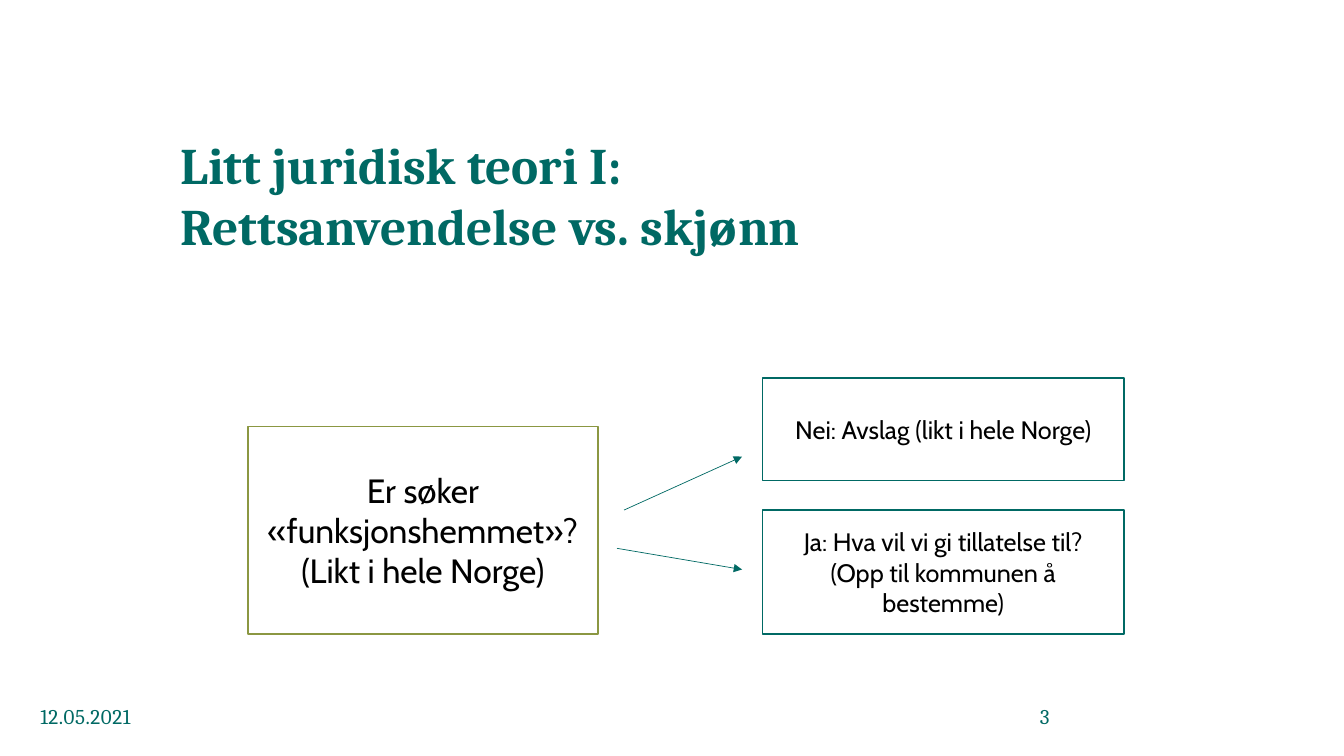
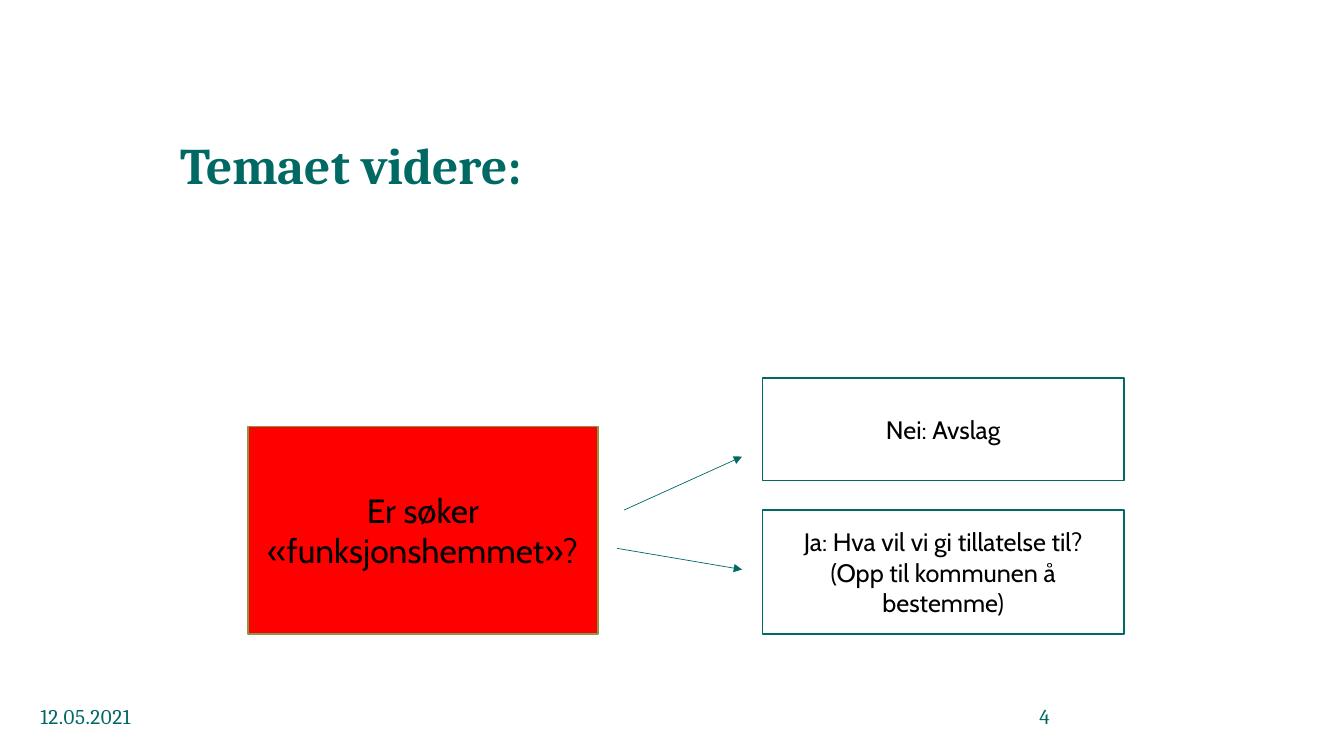
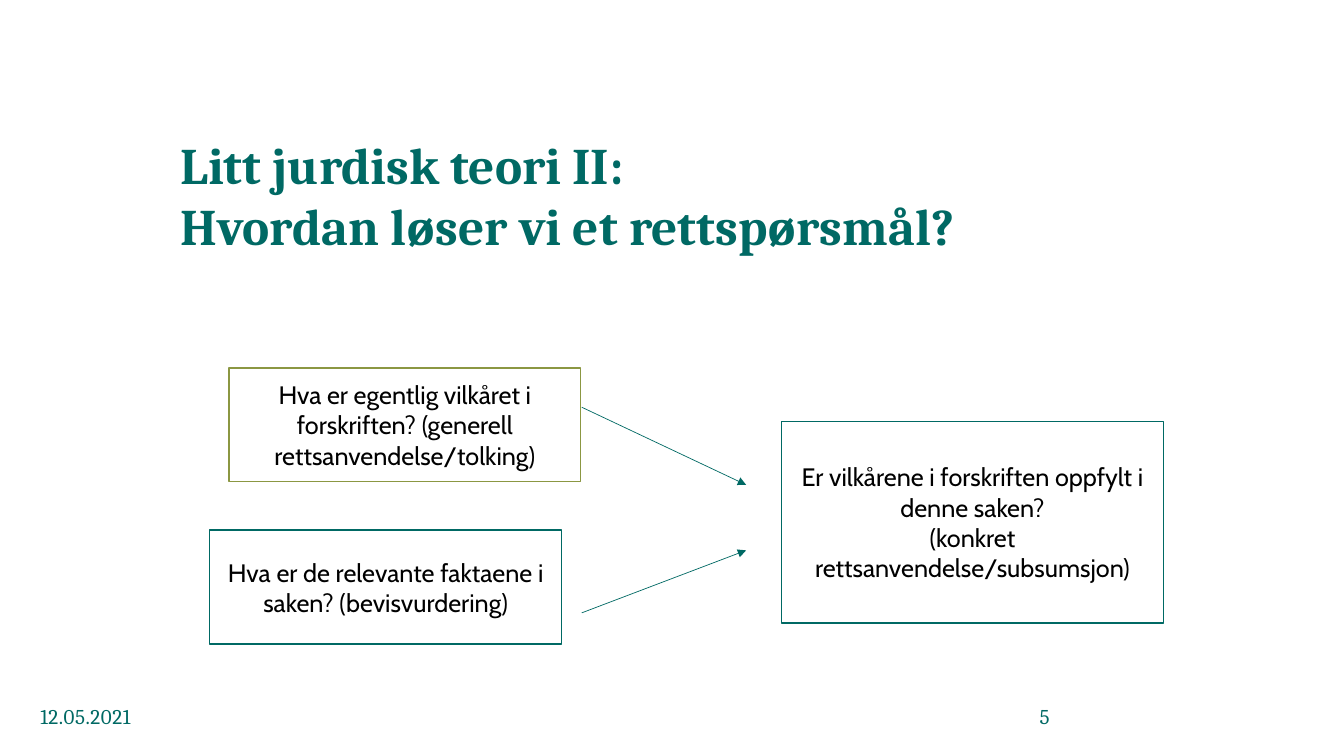
import dataclasses

import lxml.etree
import pptx
import pptx.dml.color
import pptx.enum.shapes
import pptx.enum.text
import pptx.oxml.ns
import pptx.util

Inches = pptx.util.Inches
Pt = pptx.util.Pt
ALIGN = pptx.enum.text.PP_ALIGN
ANCHOR = pptx.enum.text.MSO_ANCHOR


@dataclasses.dataclass(frozen=True)
class Theme:
    """Colours, fonts and sizes shared by the slides."""
    teal: str = "006964"
    olive: str = "8B9742"
    red: str = "FF0000"
    white: str = "FFFFFF"
    black: str = "000000"
    heading_font: str = "Cambria"
    body_font: str = "Cabin"
    title_size: float = 36.6
    title_leading: float = 44
    question_size: float = 24
    body_size: float = 18
    footer_size: float = 15
    footer_spacing: int = 40
    border: float = 1
    arrow: float = 0.5


THEME = Theme()


def rgb(code):
    """Turn a hex code into a colour."""
    return pptx.dml.color.RGBColor.from_string(code)


def add_run(paragraph, text, font, size, color, bold=False):
    """Add one styled run and return it."""
    run = paragraph.add_run()
    run.text = text
    run.font.name = font
    run.font.size = Pt(size)
    run.font.bold = bold
    run.font.color.rgb = rgb(color)
    return run


def add_text_area(slide, left, top, width, height):
    """Add a wrapping text box without insets and return its first paragraph."""
    area = slide.shapes.add_textbox(Inches(left), Inches(top), Inches(width), Inches(height))
    frame = area.text_frame
    frame.word_wrap = True
    frame.margin_left = frame.margin_top = frame.margin_right = frame.margin_bottom = 0
    return frame.paragraphs[0]


def add_title(slide, lines):
    """Place the slide title, one line of text under another."""
    heading = add_text_area(slide, 1.79, 1.32, 10.16, 1.23)
    heading.line_spacing = Pt(THEME.title_leading)
    for index, line in enumerate(lines):
        if index:
            heading.add_line_break()
        add_run(heading, line, THEME.heading_font, THEME.title_size, THEME.teal, bold=True)


def add_footer(slide, number):
    """Place the date and the slide number."""
    entries = (("12.05.2021", 0.4, 1.11, ALIGN.LEFT), (str(number), 9.77, 0.64, ALIGN.RIGHT))
    for text, left, width, alignment in entries:
        entry = add_text_area(slide, left, 6.98, width, 0.25)
        entry.alignment = alignment
        run = add_run(entry, text, THEME.heading_font, THEME.footer_size, THEME.teal)
        run.font._element.set("spc", str(THEME.footer_spacing))


def add_step(slide, box, lines, border=THEME.teal, fill=THEME.white, size=THEME.body_size):
    """Draw one bordered step with centred paragraphs."""
    step = slide.shapes.add_shape(
        pptx.enum.shapes.MSO_SHAPE.RECTANGLE, *(Inches(length) for length in box))
    step.shadow.inherit = False
    step.fill.solid()
    step.fill.fore_color.rgb = rgb(fill)
    step.line.color.rgb = rgb(border)
    step.line.width = Pt(THEME.border)
    frame = step.text_frame
    frame.word_wrap = True
    frame.vertical_anchor = ANCHOR.MIDDLE
    for index, line in enumerate(lines):
        paragraph = frame.add_paragraph() if index else frame.paragraphs[0]
        paragraph.alignment = ALIGN.CENTER
        add_run(paragraph, line, THEME.body_font, size, THEME.black)


def add_arrow(slide, start_x, start_y, end_x, end_y):
    """Draw a thin arrow between two points."""
    arrow = slide.shapes.add_connector(
        pptx.enum.shapes.MSO_CONNECTOR.STRAIGHT,
        Inches(start_x), Inches(start_y), Inches(end_x), Inches(end_y))
    arrow.line.color.rgb = rgb(THEME.teal)
    arrow.line.width = Pt(THEME.arrow)
    head = lxml.etree.SubElement(arrow.line._get_or_add_ln(), pptx.oxml.ns.qn("a:tailEnd"))
    head.set("type", "triangle")
    lxml.etree.SubElement(arrow._element.spPr, pptx.oxml.ns.qn("a:effectLst"))


def add_decision(slide, left, top, question, refusal, question_fill=THEME.white):
    """Draw a question that leads to a refusal or a permit."""
    outcome_left, outcome_width = left + 5.1, 3.59
    permit = ("Ja: Hva vil vi gi tillatelse til?", "(Opp til kommunen å bestemme)")
    add_step(slide, (left, top + 0.48, 3.47, 2.06), question,
             THEME.olive, question_fill, THEME.question_size)
    add_step(slide, (outcome_left, top + 1.31, outcome_width, 1.23), permit)
    add_step(slide, (outcome_left, top, outcome_width, 1.02), (refusal,))
    arrow_end = left + 4.9
    add_arrow(slide, left + 3.73, top + 1.31, arrow_end, top + 0.78)
    add_arrow(slide, left + 3.66, top + 1.69, arrow_end, top + 1.9)


def add_subsumption(slide, left, top):
    """Draw the rule and the facts leading to the conclusion."""
    rule = "Hva er egentlig vilkåret i forskriften? (generell rettsanvendelse/tolking)"
    facts = "Hva er de relevante faktaene i saken? (bevisvurdering)"
    conclusion = ("Er vilkårene i forskriften oppfylt i denne saken?",
                  "(konkret rettsanvendelse/subsumsjon)")
    width, height = 3.49, 1.13
    add_step(slide, (left + 0.19, top, width, height), (rule,), THEME.olive)
    add_step(slide, (left, top + 1.61, width, height), (facts,))
    add_step(slide, (left + 5.67, top + 0.53, 3.79, 2), conclusion)
    for start, end in ((0.39, 1.16), (2.43, 1.81)):
        add_arrow(slide, left + 3.69, top + start, left + 5.32, top + end)


def add_slide(deck, number, title):
    """Add a blank slide with its title and footer."""
    slide = deck.slides.add_slide(deck.slide_layouts[6])
    add_title(slide, title)
    add_footer(slide, number)
    return slide


def main():
    """Build and save the deck."""
    deck = pptx.Presentation()
    deck.slide_width, deck.slide_height = Inches(13.33), Inches(7.5)
    question = "Er søker «funksjonshemmet»?"

    theory = add_slide(deck, 3, ("Litt juridisk teori I:", "Rettsanvendelse vs. skjønn"))
    add_decision(theory, 2.46, 3.75, (question, "(Likt i hele Norge)"),
                 "Nei: Avslag (likt i hele Norge)")

    topic = add_slide(deck, 4, ("Temaet videre:",))
    add_decision(topic, 2.46, 3.75, (question,), "Nei: Avslag", THEME.red)

    method = add_slide(deck, 5, ("Litt jurdisk teori II:", "Hvordan løser vi et rettspørsmål?"))
    add_subsumption(method, 2.08, 3.65)

    deck.save("out.pptx")


if __name__ == "__main__":
    main()
